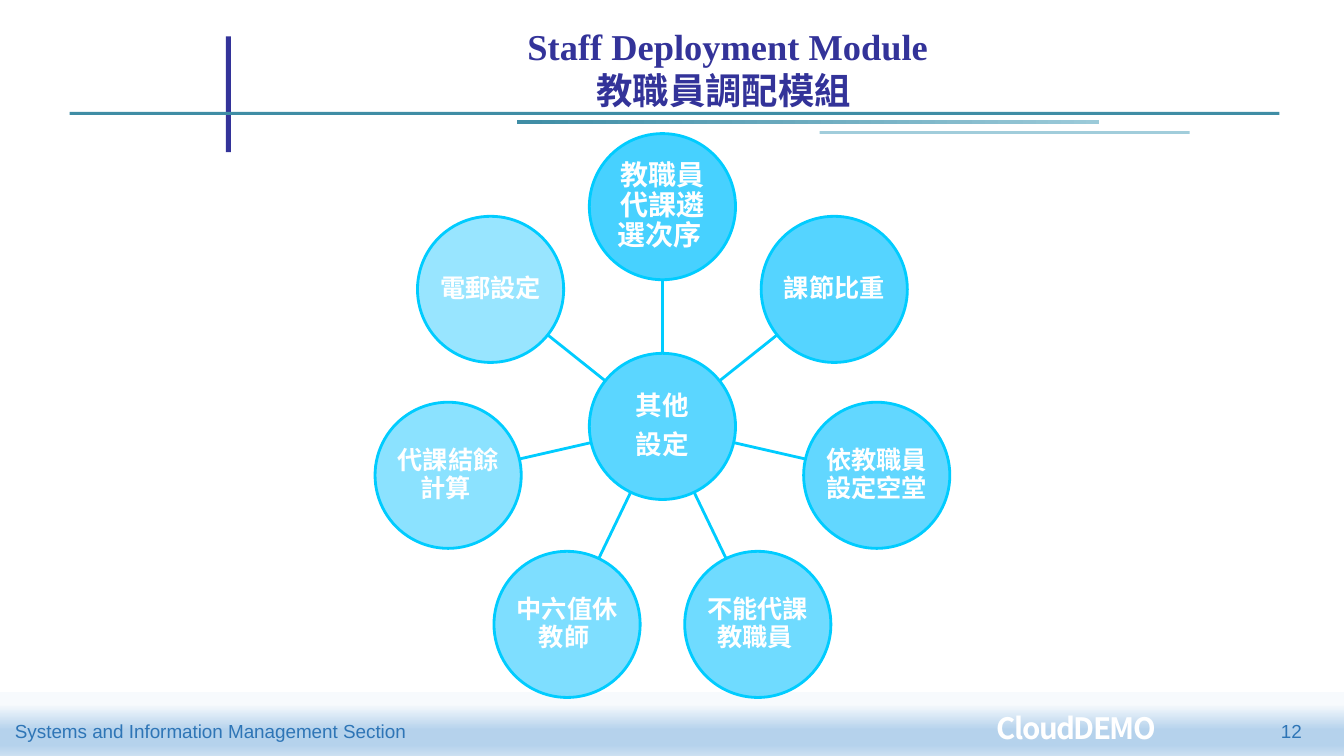
from math import cos, pi, sin
from lxml.etree import SubElement
from pptx import Presentation
from pptx.dml.color import RGBColor
from pptx.enum.shapes import MSO_CONNECTOR, MSO_SHAPE
from pptx.enum.text import MSO_ANCHOR, MSO_AUTO_SIZE, PP_ALIGN
from pptx.oxml.ns import qn
from pptx.util import Pt

PX = 9144
NAVY = RGBColor(0x33, 0x33, 0x99)
TEAL = RGBColor(0x3F, 0x8D, 0xA5)
LIGHT_TEAL = RGBColor(0x9B, 0xCA, 0xD9)
PALE_TEAL = RGBColor(0xA1, 0xCD, 0xDB)
BLUE = RGBColor(0x2E, 0x75, 0xB6)
MIST = RGBColor(0xF7, 0xFA, 0xFD)
SKY = RGBColor(0xB5, 0xD2, 0xEC)
HAZE = RGBColor(0xCE, 0xE1, 0xF2)
CYAN = RGBColor(0x33, 0xCC, 0xFF)
OUTLINE = RGBColor(0x00, 0xCC, 0xFF)
WHITE = RGBColor(0xFF, 0xFF, 0xFF)
CJK_FONT = "Noto Sans CJK SC"

SLIDE_SIZE = (1333, 750)
TITLE_BOX = (384, 20, 676, 95)
TITLE_LINES = ["Staff Deployment Module", "教職員調配模組 "]
BARS = [
    ((0, 687, 1333, 64), [(18, MIST), (58, SKY), (81, SKY), (100, HAZE)], 270),
    ((224, 36, 5, 115), [(0, NAVY)], 0),
    ((69, 111, 1200, 3), [(0, TEAL)], 0),
    ((513, 119, 577, 4), [(0, TEAL), (100, LIGHT_TEAL)], 0),
    ((813, 130, 367, 3), [(0, PALE_TEAL)], 0),
]
SMALL = {"name": "Arial", "size": Pt(13.5)}
BRAND = {"name": CJK_FONT, "size": Pt(21), "bold": True}
LABELS = [
    ((5, 709, 414, 33), "Systems and Information Management Section",
     SMALL, BLUE, PP_ALIGN.LEFT, 0),
    ((979, 700, 273, 45), "CloudDEMO", BRAND, WHITE, PP_ALIGN.LEFT, -110),
    ((1170, 709, 131, 50), "12", SMALL, BLUE, PP_ALIGN.RIGHT, 0),
]
HUB_LINES = ["其他", "設定"]
SATELLITES = ["教職員代課遴選次序 ", "課節比重", "依教職員設定空堂", "不能代課教職員 ",
              "中六值休教師 ", "代課結餘計算 ", "電郵設定"]
HUB_X, HUB_Y, ORBIT, DIAMETER = 657, 423, 218, 145
HUB_OPACITY, FIRST_OPACITY, LAST_OPACITY = 80, 90, 50


def scaled(*lengths):
    return [round(length * PX) for length in lengths]


def set_all(target, formats):
    for name, value in formats.items():
        setattr(target, name, value)


def style_run(run, formats, color):
    set_all(run.font, formats)
    run.font.color.rgb = color
    SubElement(run.font._element, qn("a:ea"), typeface=CJK_FONT)


def add_bar(slide, box, stops, angle):
    shape = slide.shapes.add_shape(MSO_SHAPE.RECTANGLE, *scaled(*box))
    shape.shadow.inherit = False
    shape.line.fill.background()
    if len(stops) == 1:
        shape.fill.solid()
        shape.fill.fore_color.rgb = stops[0][1]
        return
    shape.fill.gradient()
    shape.fill.gradient_angle = angle
    stop_list = shape._element.spPr.find(".//" + qn("a:gsLst"))
    for stop in list(stop_list):
        stop_list.remove(stop)
    for position, color in stops:
        stop = SubElement(stop_list, qn("a:gs"), pos=str(position * 1000))
        SubElement(stop, qn("a:srgbClr"), val=str(color))


def add_label(slide, box, text, formats, color, alignment, spacing):
    frame = slide.shapes.add_textbox(*scaled(*box)).text_frame
    frame.word_wrap = True
    paragraph = frame.paragraphs[0]
    paragraph.alignment = alignment
    run = paragraph.add_run()
    run.text = text
    style_run(run, formats, color)
    if spacing:
        run.font._element.set("spc", str(spacing))


def add_title(slide):
    title = slide.shapes.title
    set_all(title, dict(zip(("left", "top", "width", "height"), scaled(*TITLE_BOX))))
    frame = title.text_frame
    set_all(frame, {"margin_left": 7 * PX, "margin_right": 7 * PX,
                    "margin_top": 4 * PX, "margin_bottom": 4 * PX,
                    "vertical_anchor": MSO_ANCHOR.TOP, "word_wrap": True,
                    "auto_size": MSO_AUTO_SIZE.NONE})
    frame.text = "\n".join(TITLE_LINES)
    for paragraph in frame.paragraphs:
        paragraph.alignment = PP_ALIGN.CENTER
        style_run(paragraph.runs[0],
                  {"name": "Times New Roman", "size": Pt(26), "bold": True}, NAVY)


def add_circle(slide, x, y, lines, size, opacity):
    shape = slide.shapes.add_shape(
        MSO_SHAPE.OVAL, *scaled(x - DIAMETER / 2, y - DIAMETER / 2, DIAMETER, DIAMETER))
    shape.shadow.inherit = False
    shape.fill.solid()
    shape.fill.fore_color.rgb = CYAN
    color = shape._element.spPr.find(qn("a:solidFill")).find(qn("a:srgbClr"))
    SubElement(color, qn("a:alpha"), val=str(opacity * 1000))
    shape.line.color.rgb = OUTLINE
    shape.line.width = Pt(2)
    frame = shape.text_frame
    set_all(frame, {"margin_left": 0, "margin_right": 0, "margin_top": 0,
                    "margin_bottom": 0, "word_wrap": True,
                    "vertical_anchor": MSO_ANCHOR.MIDDLE})
    frame.text = "\n".join(lines)
    for index, paragraph in enumerate(frame.paragraphs):
        set_all(paragraph, {"alignment": PP_ALIGN.CENTER, "line_spacing": 0.9,
                            "space_before": Pt(7 if index else 0)})
        style_run(paragraph.runs[0],
                  {"name": CJK_FONT, "size": Pt(size), "bold": True}, WHITE)


def add_spoke(slide, across, down):
    near, far = DIAMETER / 2, ORBIT - DIAMETER / 2
    spoke = slide.shapes.add_connector(MSO_CONNECTOR.STRAIGHT, *scaled(
        HUB_X + near * across, HUB_Y + near * down,
        HUB_X + far * across, HUB_Y + far * down))
    spoke.line.color.rgb = OUTLINE
    spoke.line.width = Pt(2)
    SubElement(spoke._element.spPr, qn("a:effectLst"))


def main():
    presentation = Presentation()
    presentation.slide_width, presentation.slide_height = scaled(*SLIDE_SIZE)
    slide = presentation.slides.add_slide(presentation.slide_layouts[5])
    for bar in BARS:
        add_bar(slide, *bar)
    for label in LABELS:
        add_label(slide, *label)
    add_title(slide)
    add_circle(slide, HUB_X, HUB_Y, HUB_LINES, 19, HUB_OPACITY)
    fade = (FIRST_OPACITY - LAST_OPACITY) / (len(SATELLITES) - 1)
    for index, text in enumerate(SATELLITES):
        angle = 2 * pi * index / len(SATELLITES)
        across, down = sin(angle), -cos(angle)
        add_spoke(slide, across, down)
        add_circle(slide, HUB_X + ORBIT * across, HUB_Y + ORBIT * down, [text],
                   18 if index else 20, round(FIRST_OPACITY - fade * index))
    presentation.save("out.pptx")


if __name__ == "__main__":
    main()
